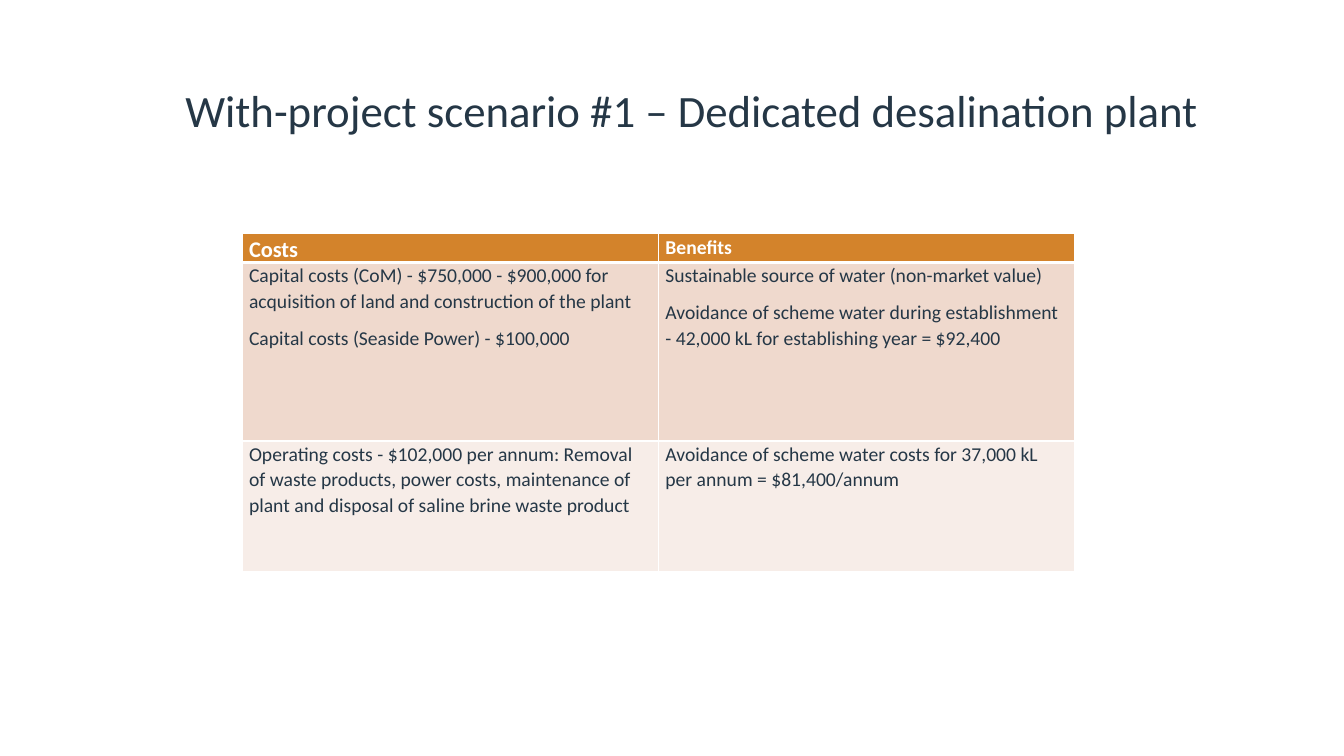
from lxml import etree
from pptx import Presentation
from pptx.dml.color import RGBColor
from pptx.enum.text import MSO_ANCHOR
from pptx.oxml.ns import qn
from pptx.util import Inches, Pt

MIDDLE = MSO_ANCHOR.MIDDLE
COLORS = {"ink": "253746", "white": "FFFFFF", "head": "D3832B",
          "dark": "EFD9CD", "light": "F7EDE8"}
ROWS = [
    (0.28, "head", [["Costs"], ["Benefits"]]),
    (1.77, "dark", [
        ["Capital costs (CoM) - $750,000 - $900,000 for acquisition of land "
         "and construction of the plant",
         "Capital costs (Seaside Power) - $100,000"],
        ["Sustainable source of water (non-market value)",
         "Avoidance of scheme water during establishment - 42,000 kL for "
         "establishing year = $92,400"]]),
    (1.3, "light", [
        ["Operating costs - $102,000 per annum: Removal of waste products, "
         "power costs, maintenance of plant and disposal of saline brine "
         "waste product"],
        ["Avoidance of scheme water costs for 37,000 kL per annum = "
         "$81,400/annum"]]),
]


class Deck:
    """Holds the text style and the current slide."""

    def __init__(self, slide, face="Calibri"):
        self.slide = slide
        self.face = face

    def text(self, frame, lines, size, color, bold=False, lead=1.07, after=8):
        for i, line in enumerate(lines):
            para = frame.add_paragraph() if i else frame.paragraphs[0]
            para.text = line
            para.line_spacing = lead
            para.space_after = Pt(after)
            font = para.font
            font.name, font.size, font.bold = self.face, Pt(size), bold
            font.color.rgb = RGBColor.from_string(COLORS[color])

    def title(self, words, left, top, width, height):
        box = self.slide.shapes.add_textbox(
            Inches(left), Inches(top), Inches(width), Inches(height))
        frame = box.text_frame
        frame.word_wrap = True
        frame.vertical_anchor = MIDDLE
        self.text(frame, [words], 32, "ink", lead=0.9, after=0)

    def border(self, cell, base):
        props = cell._tc.get_or_add_tcPr()
        widths = {"lnL": 1, "lnR": 1, "lnT": 1, "lnB": base}
        for i, (side, width) in enumerate(widths.items()):
            line = etree.Element(qn("a:" + side), w=str(Pt(width)))
            fill = etree.SubElement(line, qn("a:solidFill"))
            etree.SubElement(fill, qn("a:srgbClr"), val=COLORS["white"])
            props.insert(i, line)

    def table(self, rows, left, top, width):
        height = sum(row[0] for row in rows)
        grid = self.slide.shapes.add_table(
            len(rows), len(rows[0][2]), Inches(left), Inches(top),
            Inches(width), Inches(height)).table
        for r, (tall, fill, texts) in enumerate(rows):
            grid.rows[r].height = Inches(tall)
            for c, lines in enumerate(texts):
                cell = grid.cell(r, c)
                cell.margin_left = cell.margin_right = Inches(0.07)
                cell.margin_top = cell.margin_bottom = 0
                cell.fill.solid()
                cell.fill.fore_color.rgb = RGBColor.from_string(COLORS[fill])
                head = r == 0
                self.text(cell.text_frame, lines,
                          16 if head and c == 0 else 14,
                          "white" if head else "ink", head)
                self.border(cell, 3 if head else 1)


def main():
    show = Presentation()
    show.slide_width, show.slide_height = Inches(13.33), Inches(7.5)
    deck = Deck(show.slides.add_slide(show.slide_layouts[6]))
    deck.title("With-project scenario #1 – Dedicated desalination plant",
               1.74, 0.4, 10.68, 1.45)
    deck.table(ROWS, 2.4, 2.32, 8.26)
    show.save("out.pptx")


if __name__ == "__main__":
    main()
